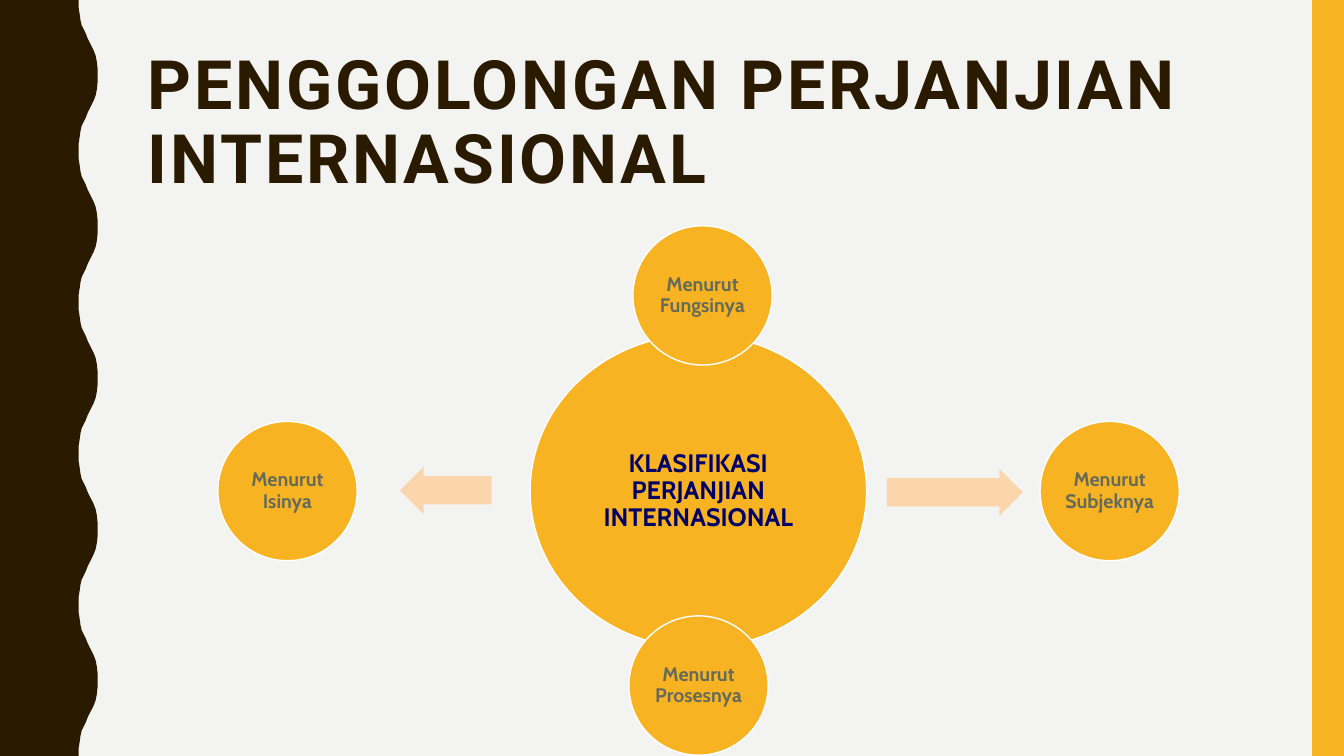
from pptx import Presentation
from pptx import util as u
from pptx.dml.color import RGBColor
from pptx.enum import shapes, text

COLORS = {
    "paper": "F3F3F2",
    "brown": "2A1A00",
    "gold": "F8B323",
    "peach": "FBD6AC",
    "white": "FFFFFF",
    "navy": "000066",
    "olive": "656A59",
}
WIDTH, HEIGHT = 33.87, 19.05
WAVE_COUNT = 5
WAVE_LENGTH = HEIGHT / WAVE_COUNT
RISING_WAVE = [
    (1.98, 0), (1.98, 0.18), (2.01, 0.36), (2.03, 0.51), (2.06, 0.64),
    (2.11, 0.74), (2.16, 0.84), (2.21, 0.97), (2.26, 1.07), (2.31, 1.17),
    (2.36, 1.27), (2.41, 1.4), (2.44, 1.55), (2.46, 1.73),
]
SATELLITE_SIZE = 3.51
SATELLITES = [
    ("Menurut Fungsinya", 15.95, 5.69),
    ("Menurut Subjeknya", 26.21, 10.62),
    ("Menurut Prosesnya", 15.85, 15.52),
    ("Menurut Isinya", 5.49, 10.62),
]


class SlideBuilder:
    def __init__(self, page):
        self.page = page
        fill = page.background.fill
        fill.solid()
        fill.fore_color.rgb = self.color("paper")

    def color(self, name):
        return RGBColor.from_string(COLORS[name])

    def paint(self, shape, fill, line=None):
        shape.shadow.inherit = False
        shape.fill.solid()
        shape.fill.fore_color.rgb = self.color(fill)
        if line:
            shape.line.color.rgb = self.color(line)
            shape.line.width = u.Pt(1)
        else:
            shape.line.fill.background()

    def shape(self, kind, left, top, width, height, fill, line=None):
        shape = self.page.shapes.add_shape(
            kind, u.Cm(left), u.Cm(top), u.Cm(width), u.Cm(height))
        self.paint(shape, fill, line)
        return shape

    def label(self, frame, words, font, size, color):
        frame.word_wrap = True
        frame.vertical_anchor = text.MSO_ANCHOR.MIDDLE
        frame.text = words
        para = frame.paragraphs[0]
        para.line_spacing = 0.9
        span = para.runs[0]
        span.font.name = font
        span.font.size = u.Pt(size)
        span.font.bold = True
        span.font.color.rgb = self.color(color)
        return para

    def title(self, words, left, top, width, height):
        box = self.page.shapes.add_textbox(
            u.Cm(left), u.Cm(top), u.Cm(width), u.Cm(height))
        para = self.label(box.text_frame, words, "Roboto", 48.6, "brown")
        para.alignment = text.PP_ALIGN.LEFT
        para.runs[0]._r.get_or_add_rPr().set("spc", "200")

    def circle(self, words, left, top, width, height, size, color, inset):
        circle = self.shape(shapes.MSO_SHAPE.OVAL, left, top, width, height,
                            "gold", "white")
        frame = circle.text_frame
        frame.margin_left = frame.margin_right = u.Cm(inset)
        frame.margin_top = frame.margin_bottom = u.Cm(inset)
        para = self.label(frame, words, "Cabin", size, color)
        para.alignment = text.PP_ALIGN.CENTER

    def arrow(self, left, top, width, height, rotation=0):
        arrow = self.shape(shapes.MSO_SHAPE.RIGHT_ARROW, left, top, width,
                           height, "peach")
        arrow.adjustments[0] = 0.6
        arrow.adjustments[1] = 0.5
        arrow.rotation = rotation

    def wavy_band(self):
        crest = [(2.46, WAVE_LENGTH / 2)]
        falling = [(x, WAVE_LENGTH - y) for x, y in reversed(RISING_WAVE)]
        wave = RISING_WAVE + crest + falling
        edge = [(x, y + index * WAVE_LENGTH)
                for index in range(WAVE_COUNT) for x, y in wave]
        points = [(u.Cm(x), u.Cm(y)) for x, y in edge + [(0, HEIGHT)]]
        outline = self.page.shapes.build_freeform(0, 0)
        outline.add_line_segments(points, close=True)
        self.paint(outline.convert_to_shape(), "brown")


def main():
    deck = Presentation()
    deck.slide_width, deck.slide_height = u.Cm(WIDTH), u.Cm(HEIGHT)
    page = deck.slides.add_slide(deck.slide_layouts[6])
    builder = SlideBuilder(page)

    builder.wavy_band()
    builder.shape(shapes.MSO_SHAPE.RECTANGLE, 33.07, 0, 0.8, HEIGHT, "gold")
    builder.title("PENGGOLONGAN PERJANJIAN INTERNASIONAL",
                  3.48, 1.07, 28.27, 4.14)

    builder.circle("KLASIFIKASI PERJANJIAN INTERNASIONAL",
                   13.36, 8.43, 8.48, 7.9, 18, "navy", 0.08)
    builder.arrow(22.35, 11.81, 3.43, 1.19)
    builder.arrow(10.08, 11.76, 2.31, 1.19, 180)
    for words, left, top in SATELLITES:
        builder.circle(words, left, top, SATELLITE_SIZE, SATELLITE_SIZE,
                       14, "olive", 0.05)

    deck.save("out.pptx")


if __name__ == "__main__":
    main()
